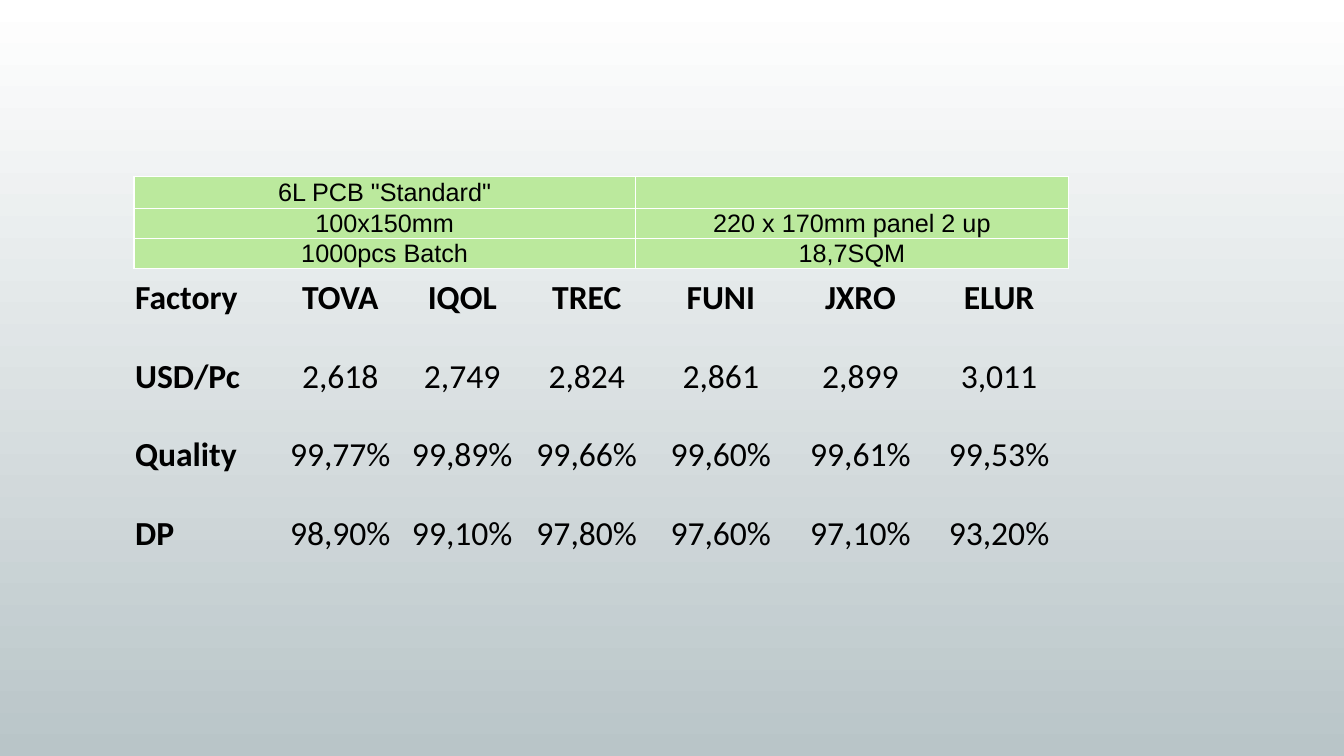
from lxml.etree import SubElement
from pptx import Presentation
from pptx.dml.color import RGBColor
from pptx.enum.text import MSO_ANCHOR, PP_ALIGN
from pptx.oxml.ns import qn
from pptx.util import Inches, Pt

BLACK, WHITE, GREEN, GREY = "000000", "FFFFFF", "BBE99D", "B9C5C8"
NO_GRID_STYLE = "{2D5ABB26-0587-4C30-8999-92F81FD0307C}"
LEFT = 1.33

BATCH_COLUMNS = [4.97, 4.3]
BATCH = [
    ['6L PCB "Standard"', ""],
    ["100x150mm", "220 x 170mm panel 2 up"],
    ["1000pcs Batch", "18,7SQM"],
]
FACTORY_COLUMNS = [1.43, 1.23, 1.19, 1.28, 1.38, 1.39, 1.36]
FACTORIES = [
    ["Factory", "TOVA", "IQOL", "TREC", "FUNI", "JXRO", "ELUR"],
    ["USD/Pc", "2,618", "2,749", "2,824", "2,861", "2,899", "3,011"],
    ["Quality", "99,77%", "99,89%", "99,66%", "99,60%", "99,61%", "99,53%"],
    ["DP", "98,90%", "99,10%", "97,80%", "97,60%", "97,10%", "93,20%"],
]


def color(hex_value):
    return RGBColor.from_string(hex_value)


def paint_background(slide):
    fill = slide.background.fill
    fill.gradient()
    fill.gradient_angle = 90
    for stop, position, shade in zip(fill.gradient_stops, (0, 1), (GREY, WHITE)):
        stop.position = position
        stop.color.rgb = color(shade)


def plain_table(slide, top, columns, row_height, rows):
    """Place a table without grid or bands at the common left edge."""
    table = slide.shapes.add_table(
        len(rows), len(columns), Inches(LEFT), Inches(top),
        Inches(sum(columns)), Inches(row_height * len(rows))).table
    table.first_row = table.horz_banding = False
    table._tbl.tblPr.find(qn("a:tableStyleId")).text = NO_GRID_STYLE
    for column, width in zip(table.columns, columns):
        column.width = Inches(width)
    for row in table.rows:
        row.height = Inches(row_height)
    return table


def write_cell(cell, text, anchor, align, **font_format):
    margin = Inches(0.01)
    cell_format = {"margin_left": margin, "margin_right": margin,
                   "margin_top": margin, "margin_bottom": 0,
                   "vertical_anchor": anchor}
    for key, value in cell_format.items():
        setattr(cell, key, value)
    paragraph = cell.text_frame.paragraphs[0]
    paragraph.alignment = align
    if text:
        run = paragraph.add_run()
        run.text = text
        run.font.color.rgb = color(BLACK)
        for key, value in font_format.items():
            setattr(run.font, key, value)


def add_borders(cell, shade):
    properties = cell._tc.get_or_add_tcPr()
    for side in ("lnL", "lnR", "lnT", "lnB"):
        line = SubElement(properties, qn(f"a:{side}"), w=str(Pt(1)))
        solid = SubElement(line, qn("a:solidFill"))
        SubElement(solid, qn("a:srgbClr"), val=shade)


def factory_table(slide, top):
    table = plain_table(slide, top, FACTORY_COLUMNS, 0.78, FACTORIES)
    for r, row in enumerate(FACTORIES):
        for c, text in enumerate(row):
            cell = table.cell(r, c)
            cell.fill.background()
            write_cell(cell, text, MSO_ANCHOR.BOTTOM,
                       PP_ALIGN.CENTER if c else PP_ALIGN.LEFT,
                       name="Calibri", size=Pt(24), bold=r == 0 or c == 0)


def batch_table(slide, top):
    table = plain_table(slide, top, BATCH_COLUMNS, 0.3, BATCH)
    for r, row in enumerate(BATCH):
        for c, text in enumerate(row):
            cell = table.cell(r, c)
            # Borders come before the fill in the cell properties
            add_borders(cell, WHITE)
            cell.fill.solid()
            cell.fill.fore_color.rgb = color(GREEN)
            write_cell(cell, text, MSO_ANCHOR.MIDDLE, PP_ALIGN.CENTER,
                       name="Arial", size=Pt(18))


def main():
    deck = Presentation()
    deck.slide_width, deck.slide_height = Inches(13.33), Inches(7.5)
    slide = deck.slides.add_slide(deck.slide_layouts[6])
    paint_background(slide)
    factory_table(slide, 2.38)
    batch_table(slide, 1.75)
    deck.save("out.pptx")


if __name__ == "__main__":
    main()
